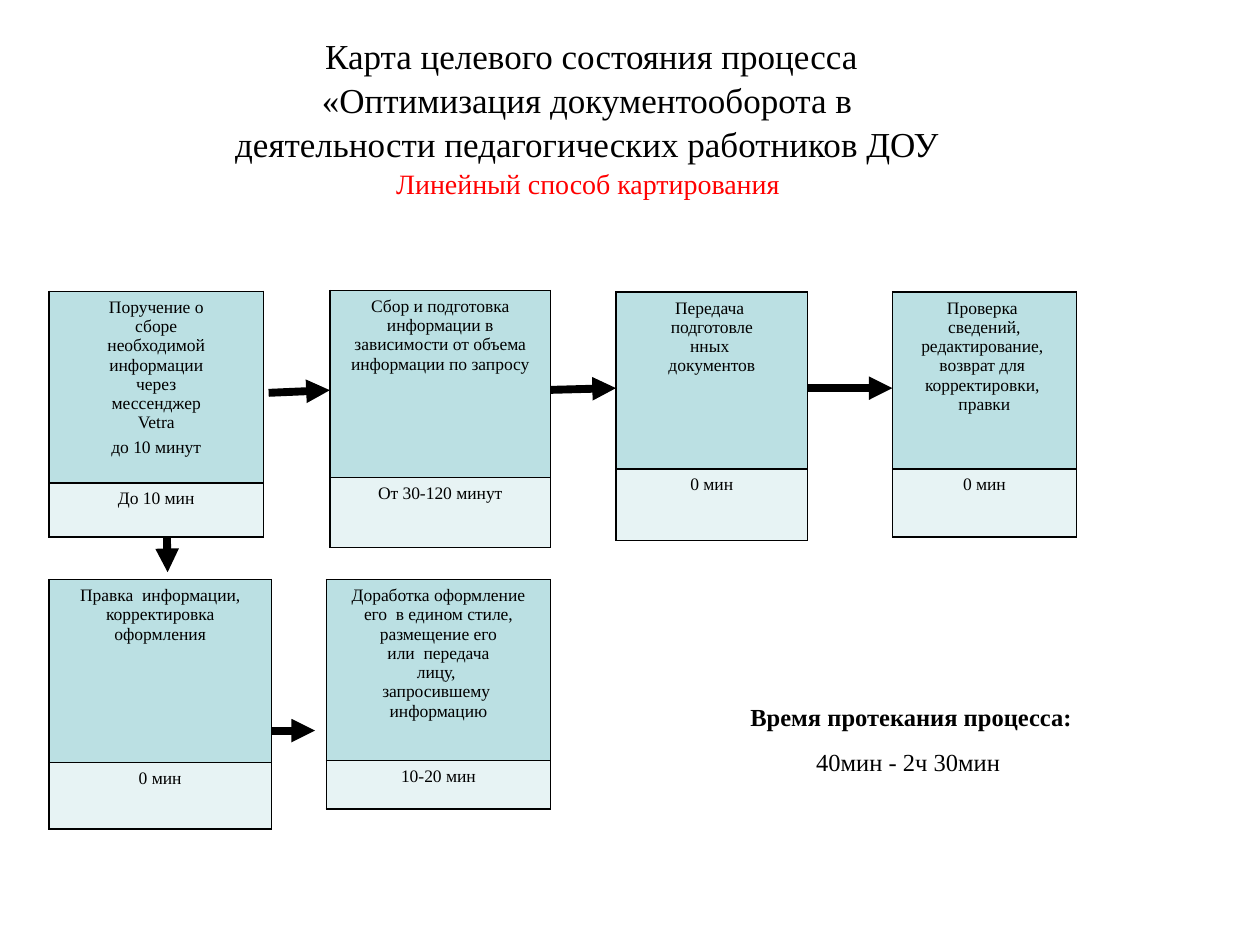
from lxml import etree
from pptx import Presentation
from pptx import util as u
from pptx.dml.color import RGBColor
from pptx.enum import shapes, text
from pptx.oxml.ns import qn

BLACK, RED = "000000", "FF0000"
DARK, LIGHT = "BBE0E3", "E7F3F4"


def color(fmt, hexa):
    """Give a fill or font a solid colour."""
    if hasattr(fmt, "solid"):
        fmt.solid()
        fmt.fore_color.rgb = RGBColor.from_string(hexa)
    else:
        fmt.color.rgb = RGBColor.from_string(hexa)


def write(para, words, size=10, hexa=BLACK, bold=False, before=0,
          indent=0, lines=None):
    """Add one formatted run to a centred paragraph."""
    para.alignment = text.PP_ALIGN.CENTER
    para.space_before = u.Pt(before)
    if lines:
        para.line_spacing = lines
    if indent:
        props = para._p.get_or_add_pPr()
        for side in ("marL", "marR"):
            props.set(side, str(u.Pt(indent)))
        props.set("indent", "0")
    run = para.add_run()
    run.text = words
    run.font.name = "Times New Roman"
    run.font.size = u.Pt(size)
    run.font.bold = bold
    color(run.font, hexa)


class Deck:
    def __init__(self):
        self.prs = Presentation()
        self.prs.slide_width, self.prs.slide_height = u.Pt(720), u.Pt(540)
        self.slide = self.prs.slides.add_slide(self.prs.slide_layouts[5])

    def title(self, box, head, sub):
        shape = self.slide.shapes.title
        shape.left, shape.top, shape.width, shape.height = map(u.Pt, box)
        frame = shape.text_frame
        frame.vertical_anchor = text.MSO_ANCHOR.TOP
        frame.auto_size = text.MSO_AUTO_SIZE.NONE
        para = frame.paragraphs[0]
        for line in head:
            write(para, line, size=20, lines=1.05)
            para.add_line_break()
        write(para, sub, size=16, hexa=RED, lines=1.05)

    def arrow(self, *ends):
        line = self.slide.shapes.add_connector(
            shapes.MSO_CONNECTOR.STRAIGHT, *map(u.Pt, ends))
        line.line.width = u.Pt(4.5)
        color(line.line.fill, BLACK)
        tail = etree.SubElement(line.line._get_or_add_ln(), qn("a:tailEnd"))
        tail.set("type", "triangle")
        etree.SubElement(line._element.spPr, qn("a:effectLst"))

    def step(self, left, top, width, rows, paras, time):
        """Add a two-row table: the task above, its time below."""
        table = self.slide.shapes.add_table(
            2, 1, *map(u.Pt, (left, top, width, sum(rows)))).table
        table.columns[0].width = u.Pt(width)
        parts = (paras, [(time, 0, 0)])
        for i, (high, part, fill) in enumerate(zip(rows, parts, (DARK, LIGHT))):
            table.rows[i].height = u.Pt(high)
            cell = table.cell(i, 0)
            self.border(cell)
            color(cell.fill, fill)
            frame = cell.text_frame
            for j, (words, indent, before) in enumerate(part):
                para = frame.add_paragraph() if j else frame.paragraphs[0]
                write(para, words, indent=indent, before=before)

    def border(self, cell):
        props = cell._tc.get_or_add_tcPr()
        for tag in ("a:lnL", "a:lnR", "a:lnT", "a:lnB"):
            edge = etree.SubElement(props, qn(tag), w=str(u.Pt(1)))
            fill = etree.SubElement(edge, qn("a:solidFill"))
            etree.SubElement(fill, qn("a:srgbClr"), val=BLACK)

    def note(self, box, head, body):
        frame = self.slide.shapes.add_textbox(*map(u.Pt, box)).text_frame
        frame.word_wrap = True
        write(frame.paragraphs[0], head, size=14, bold=True, lines=1.5)
        write(frame.add_paragraph(), body, size=14, lines=1.5)


ARROWS = [
    (153.5, 224.5, 188.5, 223),
    (307.5, 223, 352, 221.8),
    (462, 221.8, 510, 221.8),
    (95, 286, 95.8, 327),
    (132.5, 417.5, 180, 417.5),
]
# left, top, width, row heights, (task, indent, space before), time
STEPS = [
    (28, 166.5, 122.5, (109.5, 31),
     [("Поручение о сборе необходимой информации через мессенджер Vetra", 21.6, 0),
      ("до 10 минут", 21.6, 3.2)], "До 10 мин"),
    (188.5, 166, 126, (107, 40),
     [("Сбор и подготовка информации в зависимости от объема "
       "информации по запросу", 0, 0)], "От 30-120 минут"),
    (352, 167, 109.5, (101, 41),
     [("Передача  подготовленных  документов", 21.6, 0)], "0 мин"),
    (510, 167, 105, (101, 39),
     [("Проверка  сведений,", 23.5, 0),
      ("редактирование,  возврат для  корректировки,  правки", 7.2, 0)],
     "0 мин"),
    (28, 331.2, 127, (104.5, 38),
     [("Правка  информации,  корректировка  оформления", 9.4, 0)], "0 мин"),
    (186.5, 331.2, 128, (103.5, 27.5),
     [("Доработка оформление его  в едином стиле,", 7.2, 0),
      ("размещение его или  передача лицу,  запросившему  информацию", 23, 0)],
     "10-20 мин"),
]


def main():
    deck = Deck()
    deck.title((60, 15, 556, 99.5),
               ["Карта целевого состояния процесса",
                "«Оптимизация документооборота в ",
                "деятельности педагогических работников ДОУ "],
               "Линейный способ картирования ")
    for ends in ARROWS:
        deck.arrow(*ends)
    for step in STEPS:
        deck.step(*step)
    deck.note((383, 389.5, 272, 55.5),
              " Время протекания процесса:", "40мин - 2ч 30мин")
    deck.prs.save("out.pptx")


if __name__ == "__main__":
    main()
